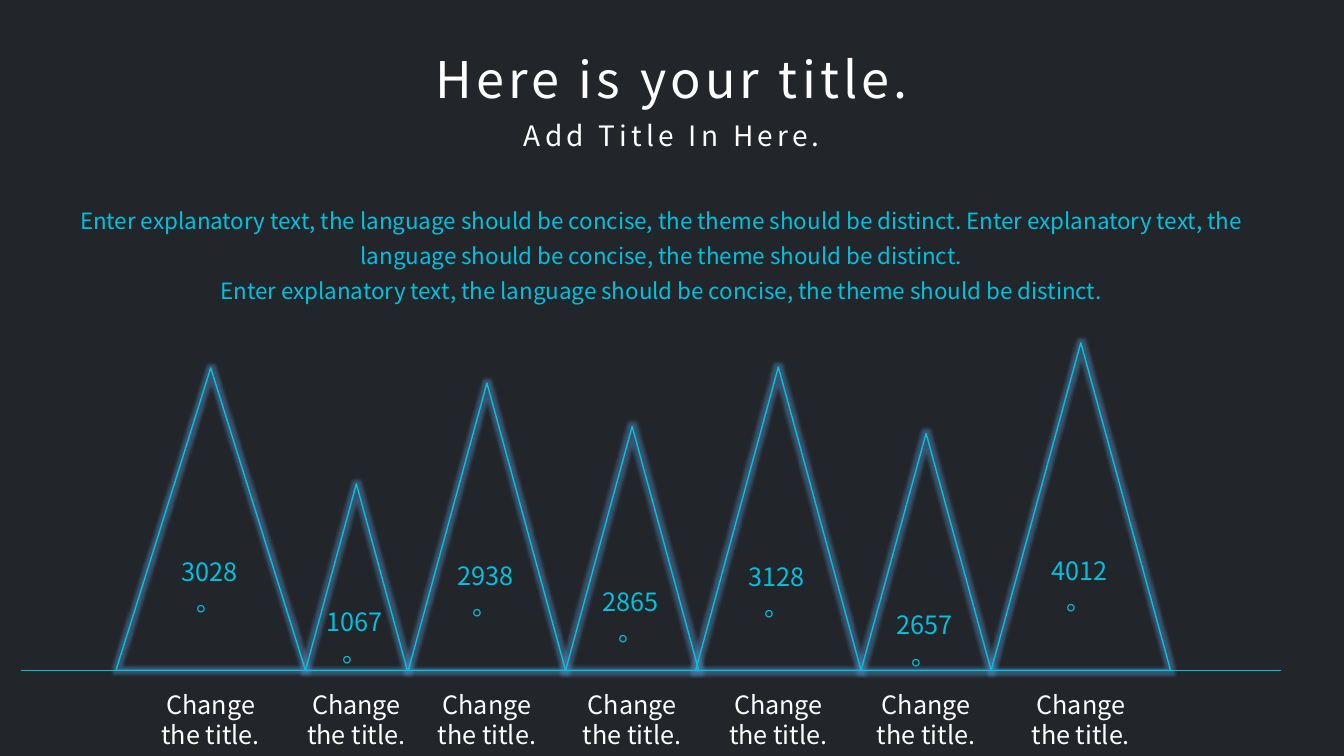
from lxml import etree
from pptx import Presentation
from pptx.dml.color import RGBColor
from pptx.enum import shapes, text
from pptx.oxml import ns
from pptx.util import Inches, Pt

FONT = "Noto Sans CJK SC"
DARK, CYAN, WHITE, GLOW = "22252A", "00C1DE", "FFFFFF", "5B9BD5"
BASE = 6.65

# left, width, height, value, top of value
PEAKS = [
    (1.15, 1.88, 3.00, "3028。", 5.47),
    (3.03, 1.01, 1.85, "1067。", 5.97),
    (4.05, 1.56, 2.85, "2938。", 5.51),
    (5.61, 1.32, 2.42, "2865。", 5.77),
    (6.90, 1.64, 3.01, "3128。", 5.52),
    (8.54, 1.29, 2.35, "2657。", 6.00),
    (9.83, 1.78, 3.25, "4012。", 5.46),
]


def color(code):
    return RGBColor.from_string(code)


def add(parent, tag, **attrs):
    return etree.SubElement(parent, ns.qn(tag), **attrs)


def write(slide, box, lines, size, ink, gap=None, track=None):
    """Add centred text; track is letter spacing in hundredths of a point."""
    area = slide.shapes.add_textbox(*map(Inches, box))
    frame = area.text_frame
    frame.word_wrap = True
    frame.text = "\n".join(lines)
    for par in frame.paragraphs:
        par.alignment = text.PP_ALIGN.CENTER
        par.font.name = FONT
        par.font.size = Pt(size)
        par.font.color.rgb = color(ink)
        if gap:
            par.line_spacing = gap
        for run in par.runs:
            props = run._r.get_or_add_rPr()
            add(props, "a:ea", typeface=FONT)
            if track:
                props.set("spc", str(track))


def head(slide, box):
    left, top, width, height = box
    write(slide, (left, top, width, 0.71), ["Here is your title."],
          36, WHITE, track=300)
    write(slide, (left, top + 0.7, width, 0.44), ["Add Title In Here."],
          20, WHITE, track=300)


def intro(slide, box):
    line = ("Enter explanatory text, the language should be concise, "
            "the theme should be distinct.")
    write(slide, box, [f"{line} {line}", line], 16, CYAN, gap=1.3)


def peak(slide, box):
    """Add an outlined triangle with a soft glow."""
    shape = slide.shapes.add_shape(
        shapes.MSO_SHAPE.ISOSCELES_TRIANGLE, *map(Inches, box))
    shape.fill.background()
    shape.line.color.rgb = color(CYAN)
    shape.line.width = Pt(1)
    shape.shadow.inherit = False
    effects = shape._element.spPr.find(ns.qn("a:effectLst"))
    glow = add(effects, "a:glow", rad=str(Inches(0.07)))
    tint = add(glow, "a:srgbClr", val=GLOW)
    add(tint, "a:alpha", val="40000")


def ground(slide, left, right):
    line = slide.shapes.add_connector(
        shapes.MSO_CONNECTOR.STRAIGHT,
        Inches(left), Inches(BASE), Inches(right), Inches(BASE))
    line.line.color.rgb = color(CYAN)
    line.line.width = Pt(1)
    add(line._element.spPr, "a:effectLst")


def range_(slide):
    """Draw the row of peaks with their values and labels."""
    for left, width, height, value, top in PEAKS:
        mid = left + width / 2
        peak(slide, (left, BASE - height, width, height))
        write(slide, (mid - 0.6, BASE + 0.14, 1.2, 0.4),
              ["Change the title."], 18, WHITE)
        write(slide, (mid - 0.5, top, 0.97, 0.4), [value], 18, CYAN)
    ground(slide, 0.21, 12.71)


def main():
    deck = Presentation()
    deck.slide_width, deck.slide_height = Inches(13.33), Inches(7.5)
    slide = deck.slides.add_slide(deck.slide_layouts[6])
    fill = slide.background.fill
    fill.solid()
    fill.fore_color.rgb = color(DARK)
    head(slide, (3.76, 0.43, 5.81, 1.14))
    intro(slide, (0.6, 1.93, 11.92, 1.12))
    range_(slide)
    deck.save("out.pptx")


if __name__ == "__main__":
    main()
